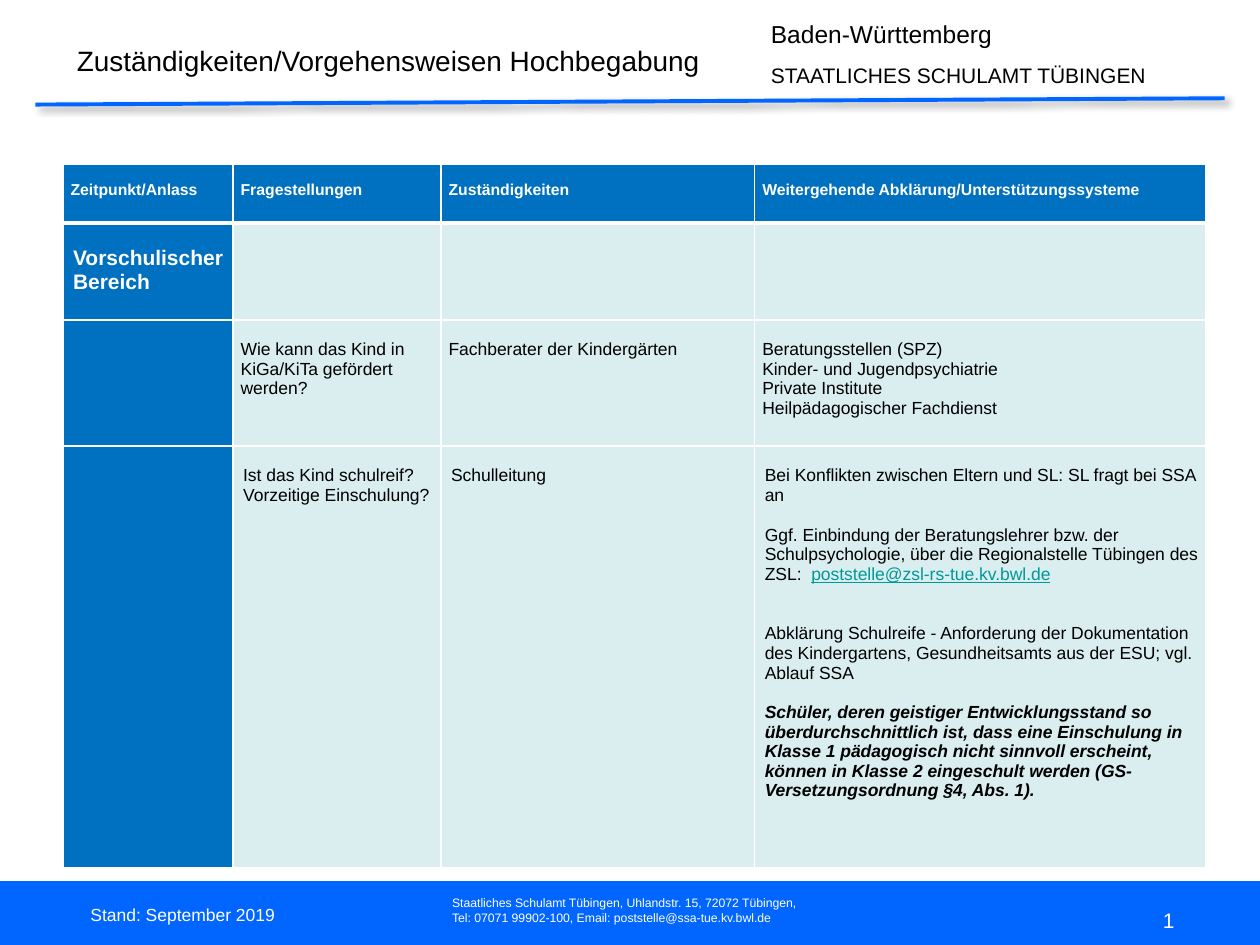
from lxml import etree
from pptx import Presentation
from pptx import util as u
from pptx.dml.color import RGBColor
from pptx.enum import shapes, text
from pptx.oxml.ns import qn

BLUE, CELL_BLUE, CELL_PALE = "0066FF", "0070C0", "DAEDEF"
WHITE, BLACK, LINK = "FFFFFF", "000000", "009999"
ALIGN, ANCHOR = text.PP_ALIGN, text.MSO_ANCHOR

COLUMNS = [1.35, 1.65, 2.49, 3.58]
ROWS = [0.47, 0.77, 1, 3.35]
# Per row: side inset, inset above the text
INSETS = [(0.06, 0.14), (0.08, 0.19), (0.06, 0.16), (0.08, 0.16)]
LINE = 11.5  # height of one line of 10 pt text

HEADINGS = ["Zeitpunkt/Anlass", "Fragestellungen", "Zuständigkeiten",
            "Weitergehende Abklärung/Unterstützungssysteme"]
# Text of the body cells: (row, column) -> lines
BODY = {
    (2, 1): ["Wie kann das Kind in KiGa/KiTa gefördert werden?"],
    (2, 2): ["Fachberater der Kindergärten"],
    (2, 3): ["Beratungsstellen (SPZ)", "Kinder- und Jugendpsychiatrie",
             "Private Institute", "Heilpädagogischer Fachdienst"],
    (3, 1): ["Ist das Kind schulreif?", "Vorzeitige Einschulung?"],
    (3, 2): ["Schulleitung"],
    (3, 3): ["Bei Konflikten zwischen Eltern und SL: SL fragt bei SSA an"],
}


def color(value):
    return RGBColor.from_string(value)


def write(para, words, size=10, fill=BLACK, bold=False, italic=False,
          underline=False, before=0, align=ALIGN.LEFT):
    para.alignment = align
    para.space_before = u.Pt(before)
    span = para.add_run()
    span.text = words
    font = span.font
    font.name, font.size = "Arial", u.Pt(size)
    font.bold, font.italic, font.underline = bold, italic, underline
    font.color.rgb = color(fill)


def write_lines(frame, lines, **style):
    for index, line in enumerate(lines):
        para = frame.add_paragraph() if index else frame.paragraphs[0]
        write(para, line, **style)


def add_box(page, left, top, width, height, anchor=ANCHOR.TOP):
    box = page.shapes.add_textbox(*map(u.Inches, (left, top, width, height)))
    frame = box.text_frame
    frame.word_wrap = True
    frame.vertical_anchor = anchor
    return frame


def add_title(page, words):
    title = page.shapes.title
    title.left, title.top = u.Inches(0.51), u.Inches(0.28)
    title.width, title.height = u.Inches(5.43), u.Inches(0.39)
    frame = title.text_frame
    frame.auto_size = text.MSO_AUTO_SIZE.NONE
    frame.vertical_anchor = ANCHOR.MIDDLE
    write(frame.paragraphs[0], words, size=16)


def add_band(page):
    band = page.shapes.add_shape(shapes.MSO_SHAPE.RECTANGLE, 0, u.Inches(7.01),
                                 u.Inches(10), u.Inches(0.49))
    band.shadow.inherit = False
    band.fill.solid()
    band.fill.fore_color.rgb = color(BLUE)
    band.line.color.rgb = color(BLUE)
    band.line.width = u.Pt(2)


def add_rule(page):
    rule = page.shapes.add_connector(
        shapes.MSO_CONNECTOR.STRAIGHT,
        *map(u.Inches, (0.28, 0.83, 9.72, 0.78)))
    rule.line.color.rgb = color(BLUE)
    rule.line.width = u.Pt(2.25)
    # Soft shadow to the lower right
    effects = etree.SubElement(rule._element.spPr, qn("a:effectLst"))
    shadow = etree.SubElement(effects, qn("a:outerShdw"), blurRad=str(u.Pt(4)),
                              dist=str(u.Pt(3)), dir=str(45 * 60000))
    tone = etree.SubElement(shadow, qn("a:srgbClr"), val=BLACK)
    etree.SubElement(tone, qn("a:alpha"), val="40000")


def set_borders(cell, **widths):
    properties = cell._tc.get_or_add_tcPr()
    for index, side in enumerate("LRTB"):
        line = etree.Element(qn("a:ln" + side), w=str(u.Pt(widths.get(side, 1))))
        paint = etree.SubElement(line, qn("a:solidFill"))
        etree.SubElement(paint, qn("a:srgbClr"), val=WHITE)
        properties.insert(index, line)


def add_table(page):
    table = page.shapes.add_table(
        len(ROWS), len(COLUMNS), u.Inches(0.5), u.Inches(1.3),
        u.Inches(sum(COLUMNS)), u.Inches(sum(ROWS))).table
    for column, width in zip(table.columns, COLUMNS):
        column.width = u.Inches(width)
    for row, height in enumerate(ROWS):
        table.rows[row].height = u.Inches(height)
        side, above = INSETS[row]
        for column in range(len(COLUMNS)):
            cell = table.cell(row, column)
            cell.margin_left, cell.margin_right = u.Inches(side), u.Inches(0.05)
            cell.margin_top, cell.margin_bottom = u.Inches(above), 0
            cell.fill.solid()
            dark = row == 0 or column == 0
            cell.fill.fore_color.rgb = color(CELL_BLUE if dark else CELL_PALE)
            # Heavy rule under the heading row
            set_borders(cell, T=3 if row == 1 else 1, B=3 if row == 0 else 1)
    return table


def fill_table(table):
    for column, heading in enumerate(HEADINGS):
        write_lines(table.cell(0, column).text_frame, [heading],
                    size=9, fill=WHITE, bold=True)
    write_lines(table.cell(1, 0).text_frame, ["Vorschulischer", "Bereich"],
                size=12, fill=WHITE, bold=True)
    for position, lines in BODY.items():
        write_lines(table.cell(*position).text_frame, lines)

    # Further paragraphs on support for school entry
    support = table.cell(3, 3).text_frame
    contact = support.add_paragraph()
    write(contact, "Ggf. Einbindung der Beratungslehrer bzw. der "
          "Schulpsychologie, über die Regionalstelle Tübingen des ZSL:  ",
          before=LINE)
    write(contact, "poststelle@zsl-rs-tue.kv.bwl.de", fill=LINK,
          underline=True, before=LINE)
    write(support.add_paragraph(),
          "Abklärung Schulreife - Anforderung der Dokumentation des "
          "Kindergartens, Gesundheitsamts aus der ESU; vgl. Ablauf SSA",
          before=2 * LINE)
    write(support.add_paragraph(),
          "Schüler, deren geistiger Entwicklungsstand so überdurchschnittlich "
          "ist, dass eine Einschulung in Klasse 1 pädagogisch nicht sinnvoll "
          "erscheint, können in Klasse 2 eingeschult werden "
          "(GS-Versetzungsordnung §4, Abs. 1).",
          bold=True, italic=True, before=LINE)


def main():
    deck = Presentation()
    deck.slide_width, deck.slide_height = u.Inches(10), u.Inches(7.5)
    page = deck.slides.add_slide(deck.slide_layouts[5])

    # Header
    add_title(page, "Zuständigkeiten/Vorgehensweisen Hochbegabung")
    office = add_box(page, 6.02, 0.1, 3.26, 0.64)
    write(office.paragraphs[0], "Baden-Württemberg", size=14)
    write(office.add_paragraph(), "STAATLICHES SCHULAMT TÜBINGEN",
          size=12, before=8)
    add_rule(page)

    # Table
    fill_table(add_table(page))

    # Footer
    add_band(page)
    write_lines(add_box(page, 3.49, 7.06, 2.97, 0.34),
                ["Staatliches Schulamt Tübingen, Uhlandstr. 15, 72072 Tübingen,",
                 "Tel: 07071 99902-100, Email: poststelle@ssa-tue.kv.bwl.de"],
                size=7, fill=WHITE)
    write_lines(add_box(page, 0.62, 7.06, 2.33, 0.4, ANCHOR.MIDDLE),
                ["Stand: September 2019"], fill=WHITE)
    write_lines(add_box(page, 7.09, 7.1, 2.33, 0.4, ANCHOR.MIDDLE), ["1"],
                size=12, fill=WHITE, align=ALIGN.RIGHT)
    deck.save("out.pptx")


if __name__ == "__main__":
    main()
